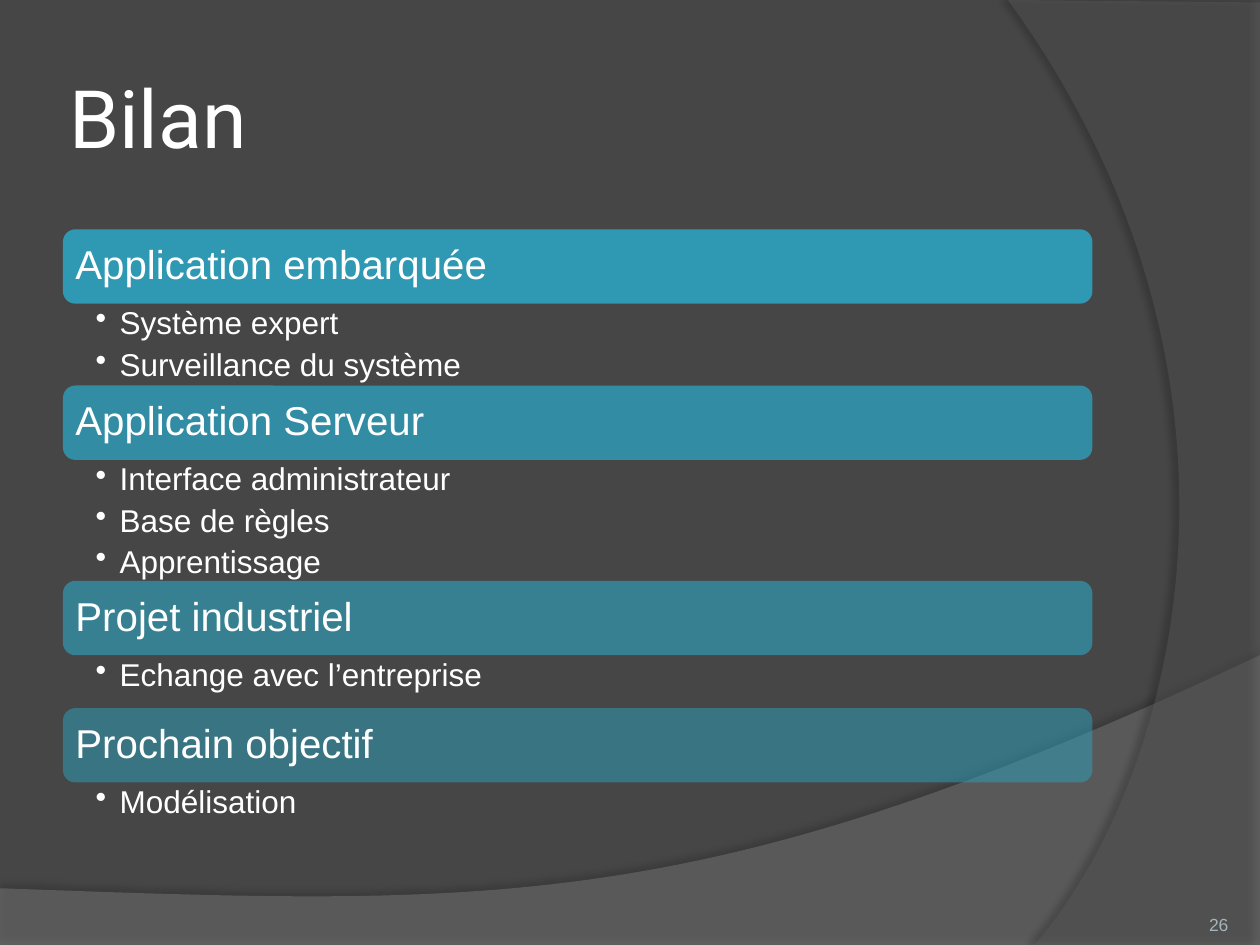
"""Build the "Bilan" summary slide."""
import pptx
import pptx.dml.color
import pptx.enum.shapes
import pptx.enum.text
import pptx.oxml
import pptx.oxml.ns
import pptx.util

TITLE = "Bilan"
NUMBER = "26"
SECTIONS = [
    ("Application embarquée", 90, 0.65, ["Système expert", "Surveillance du système"]),
    ("Application Serveur", 77, 0.96,
     ["Interface administrateur", "Base de règles", "Apprentissage"]),
    ("Projet industriel", 63, 0.42, ["Echange avec l’entreprise"]),
    ("Prochain objectif", 50, 0.42, ["Modélisation"]),
]
WAVES = [
    dict(start=(10, 5.2), c1=(5.59, 7.29), c2=(3.91, 7.19), end=(0, 7.05),
         corners=[(0, 7.5), (10, 7.5)], color="7F7F7F", alpha=45,
         shadow=(35, 4, 3.5, 270)),
    dict(start=(8.21, 7.5), c1=(9.35, 6.19), c2=(10.18, 3), end=(8, 0),
         corners=[(10, 0.02), (10, 7.5)], color="5E5E5E", alpha=40,
         shadow=(45, 4, 4, 180)),
]
LEFT, WIDTH, TOP, BAR = 0.5, 8.17, 1.82, 0.59
STEPS = 60
WHITE = "FFFFFF"
NS = pptx.oxml.ns.nsdecls("a")
Inches, Pt = pptx.util.Inches, pptx.util.Pt
ANCHOR = pptx.enum.text.MSO_ANCHOR


def rgb(color):
    """Turn a hex string into a colour."""
    return pptx.dml.color.RGBColor.from_string(color)


def box(*lengths):
    """Convert lengths in inches."""
    return [Inches(n) for n in lengths]


def paint(sp, color, alpha):
    """Give a shape a translucent fill, no line and no inherited shadow."""
    sp.shadow.inherit = False
    sp.line.fill.background()
    sp.fill.solid()
    sp.fill.fore_color.rgb = rgb(color)
    clr = sp.fill._xPr.find(".//" + pptx.oxml.ns.qn("a:srgbClr"))
    clr.append(pptx.oxml.parse_xml(f'<a:alpha {NS} val="{alpha * 1000}"/>'))


def write(sp, *lines, size=18, color=WHITE, font="Arial", align="LEFT",
          anchor=ANCHOR.MIDDLE, margins=(0, 0, 0, 0), spacing=None, after=0, bullet=False):
    """Fill a shape with formatted paragraphs."""
    tf = sp.text_frame
    tf.word_wrap = True
    tf.auto_size = pptx.enum.text.MSO_AUTO_SIZE.NONE
    tf.vertical_anchor = anchor
    tf.margin_left, tf.margin_top, tf.margin_right, tf.margin_bottom = box(*margins)
    for i, text in enumerate(lines):
        p = tf.add_paragraph() if i else tf.paragraphs[0]
        p.alignment = getattr(pptx.enum.text.PP_ALIGN, align)
        p.line_spacing = spacing
        p.space_after = Pt(after)
        if bullet:
            pPr = p._p.get_or_add_pPr()
            pPr.set("marL", str(Inches(0.19)))
            pPr.set("indent", str(-Inches(0.19)))
            pPr.append(pptx.oxml.parse_xml(f'<a:buChar {NS} char="•"/>'))
        r = p.add_run()
        r.text = text
        r.font.size, r.font.name = Pt(size), font
        r.font.color.rgb = rgb(color)


def add_wave(s, start, c1, c2, end, corners, color, alpha, shadow):
    """Draw a shaded area bounded by a Bézier curve."""
    points = []
    for i in range(1, STEPS + 1):
        t = i / STEPS
        weights = ((1 - t) ** 3, 3 * t * (1 - t) ** 2, 3 * t * t * (1 - t), t ** 3)
        points.append([sum(w * q[k] for w, q in zip(weights, (start, c1, c2, end)))
                       for k in (0, 1)])
    fb = s.shapes.build_freeform(*box(*start))
    fb.add_line_segments([box(*q) for q in points + corners], close=True)
    sp = fb.convert_to_shape()
    paint(sp, color, alpha)
    opacity, blur, dist, angle = shadow
    effects = sp._element.spPr.find(pptx.oxml.ns.qn("a:effectLst"))
    effects.append(pptx.oxml.parse_xml(
        f'<a:outerShdw {NS} blurRad="{Pt(blur)}" dist="{Pt(dist)}" dir="{angle * 60000}" '
        f'algn="ctr" rotWithShape="0"><a:srgbClr val="000000">'
        f'<a:alpha val="{opacity * 1000}"/></a:srgbClr></a:outerShdw>'))


def main():
    """Assemble and save the slide."""
    prs = pptx.Presentation()
    prs.slide_width, prs.slide_height = box(10, 7.5)
    s = prs.slides.add_slide(prs.slide_layouts[5])
    s.background.fill.solid()
    s.background.fill.fore_color.rgb = rgb("464646")
    for wave in WAVES:
        add_wave(s, **wave)

    title = s.shapes.title
    title.left, title.top, title.width, title.height = box(LEFT, 0.3, WIDTH, 1.25)
    write(title, TITLE, size=46, font="Roboto", margins=(0.05,) * 4)

    y = TOP
    for heading, alpha, height, items in SECTIONS:
        bar = s.shapes.add_shape(pptx.enum.shapes.MSO_SHAPE.ROUNDED_RECTANGLE,
                                 *box(LEFT, y, WIDTH, BAR))
        paint(bar, "2DA2BF", alpha)
        write(bar, heading, size=23, margins=(0.07,) * 4, spacing=0.9)
        body = s.shapes.add_textbox(*box(LEFT, y + BAR, WIDTH, height))
        write(body, *items, anchor=ANCHOR.TOP, margins=(0.26, 0.03, 0.18, 0.03),
              spacing=0.9, after=4.2, bullet=True)
        y += BAR + height

    write(s.shapes.add_textbox(*box(8.92, 7.02, 0.83, 0.4)), NUMBER, size=10,
          color="A4B5B9", align="RIGHT", anchor=ANCHOR.BOTTOM)
    prs.save("out.pptx")


if __name__ == "__main__":
    main()
